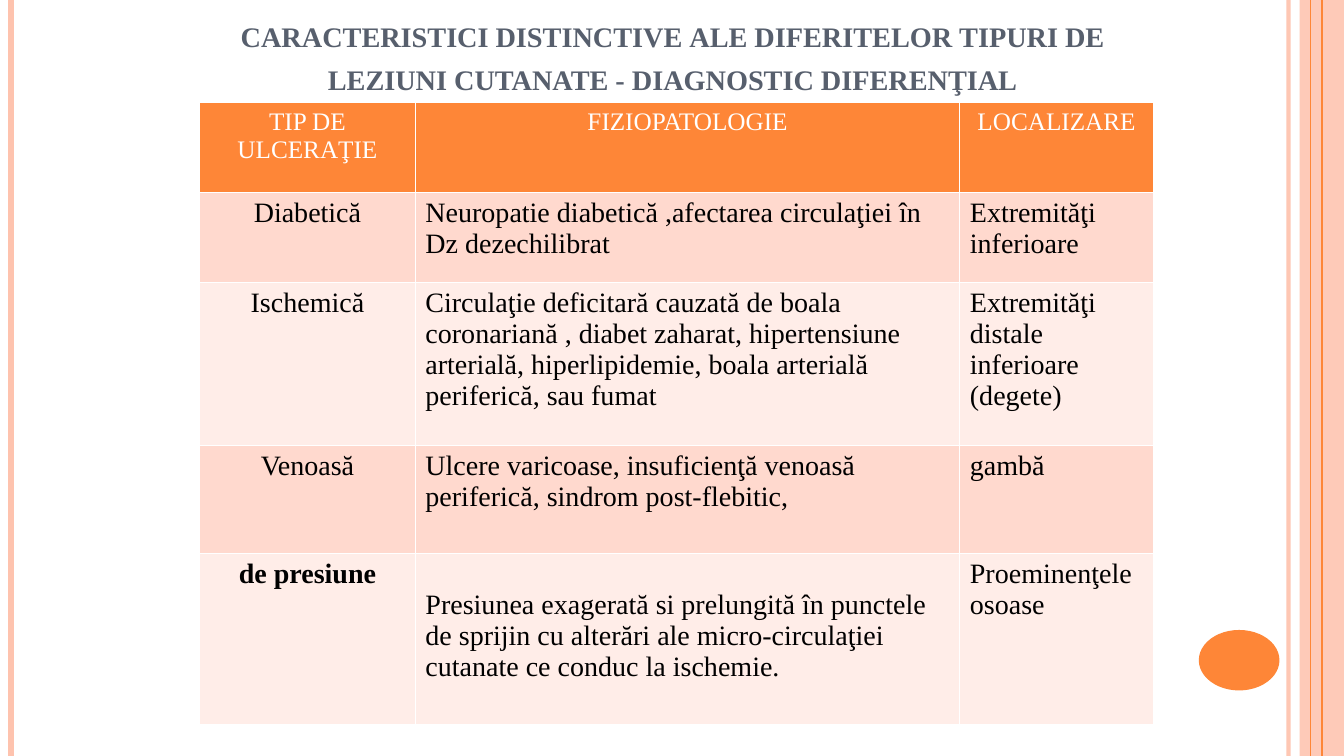
"""Builds a slide comparing the types of skin ulcer in a table."""
from dataclasses import dataclass

from lxml import etree
from pptx import Presentation
from pptx import util as u
from pptx.dml.color import RGBColor
from pptx.enum import shapes, text
from pptx.oxml import ns


@dataclass(frozen=True)
class Theme:
    font: str = "Times New Roman"
    orange: str = "FE8637"
    peach: str = "FEC3AE"
    bands: tuple = ("FFD9CE", "FFEDE8")
    slate: str = "575F6D"
    black: str = "000000"
    white: str = "FFFFFF"
    title_size: float = 25.2
    header_size: int = 18
    body_size: int = 20


theme = Theme()


def write(frame, content, size, color, bold=False, centered=False):
    """Put formatted text into a text frame and return its paragraph."""
    frame.word_wrap = True
    paragraph = frame.paragraphs[0]
    paragraph.alignment = text.PP_ALIGN.CENTER if centered else text.PP_ALIGN.LEFT
    run = paragraph.add_run()
    run.text = content
    run.font.name = theme.font
    run.font.size = u.Pt(size)
    run.font.bold = bold
    run.font.color.rgb = RGBColor.from_string(color)
    return paragraph


def paint(fill, color, opacity=100):
    """Give a fill a solid colour with an optional opacity in percent."""
    fill.solid()
    fill.fore_color.rgb = RGBColor.from_string(color)
    if opacity < 100:
        color_element = fill._xPr.find(".//" + ns.qn("a:srgbClr"))
        etree.SubElement(color_element, ns.qn("a:alpha"), val=str(opacity * 1000))


presentation = Presentation()
presentation.slide_width = u.Inches(13.33)
presentation.slide_height = u.Inches(7.5)
slide = presentation.slides.add_slide(presentation.slide_layouts[5])

stripes = [
    (12.78, 3, theme.peach, 93),
    (0.11, 4.5, theme.peach, 100),
    (13.11, 1.5, theme.orange, 100),
    (13, 0.75, theme.orange, 100),
]
decorations = [
    (shapes.MSO_SHAPE.RECTANGLE, (12.89, 0, 0.44, 7.5), theme.peach, 87),
    (shapes.MSO_SHAPE.OVAL, (11.89, 6.25, 0.8, 0.6), theme.orange, 100),
]
for preset, box, color, opacity in decorations:
    shape = slide.shapes.add_shape(preset, *map(u.Inches, box))
    shape.shadow.inherit = False
    shape.line.fill.background()
    paint(shape.fill, color, opacity)

for left, width, color, opacity in stripes:
    stripe = slide.shapes.add_connector(
        shapes.MSO_CONNECTOR.STRAIGHT,
        u.Inches(left), u.Inches(0), u.Inches(left), u.Inches(7.5))
    stripe.line.width = u.Pt(width)
    paint(stripe.line.fill, color, opacity)
    etree.SubElement(stripe._element.spPr, ns.qn("a:effectLst"))

title = slide.shapes.title
title.left, title.top, title.width, title.height = map(u.Inches, (2.17, 0, 9, 1.02))
title.text_frame.auto_size = text.MSO_AUTO_SIZE.NONE
title.text_frame.vertical_anchor = text.MSO_ANCHOR.BOTTOM
heading = write(
    title.text_frame,
    "caracteristici distinctive ale diferitelor tipuri de leziuni cutanate - diagnostic diferenţial",
    theme.title_size, theme.slate, bold=True, centered=True)
heading.line_spacing = u.Pt(30.7)
heading.runs[0].font._element.set("cap", "small")

rows = [
    ("TIP DE ULCERAŢIE", "FIZIOPATOLOGIE", "LOCALIZARE"),
    ("Diabetică",
     "Neuropatie diabetică ,afectarea circulaţiei în Dz dezechilibrat",
     "Extremităţi inferioare"),
    ("Ischemică",
     "Circulaţie deficitară cauzată de boala coronariană , diabet zaharat, "
     "hipertensiune arterială, hiperlipidemie, boala arterială periferică, sau fumat",
     "Extremităţi distale inferioare (degete)"),
    ("Venoasă",
     "Ulcere varicoase, insuficienţă venoasă periferică, sindrom post-flebitic,",
     "gambă"),
    ("de presiune",
     "Presiunea exagerată si prelungită în punctele de sprijin cu alterări ale "
     "micro-circulaţiei cutanate ce conduc la ischemie.",
     "Proeminenţele osoase"),
]
column_widths = (2.14, 5.4, 1.92)
row_heights = (0.89, 0.89, 1.62, 1.07, 1.7)
table = slide.shapes.add_table(
    len(rows), len(column_widths), u.Inches(1.98), u.Inches(1.02),
    u.Inches(sum(column_widths)), u.Inches(sum(row_heights))).table
for column, width in zip(table.columns, column_widths):
    column.width = u.Inches(width)
for row, height in zip(table.rows, row_heights):
    row.height = u.Inches(height)

for row_index, row in enumerate(rows):
    header = row_index == 0
    for column_index, content in enumerate(row):
        cell = table.cell(row_index, column_index)
        write(
            cell.text_frame, content,
            theme.header_size if header else theme.body_size,
            theme.white if header else theme.black,
            bold=content == "de presiune",
            centered=header or column_index == 0)
        properties = cell._tc.get_or_add_tcPr()
        for side in ("lnL", "lnR", "lnT", "lnB"):
            border = etree.SubElement(properties, ns.qn("a:" + side), w=str(u.Pt(1)))
            border_fill = etree.SubElement(border, ns.qn("a:solidFill"))
            etree.SubElement(border_fill, ns.qn("a:srgbClr"), val=theme.white)
        paint(cell.fill, theme.orange if header else theme.bands[(row_index - 1) % 2])

table.cell(4, 1).margin_top = u.Inches(0.36)

presentation.save("out.pptx")
